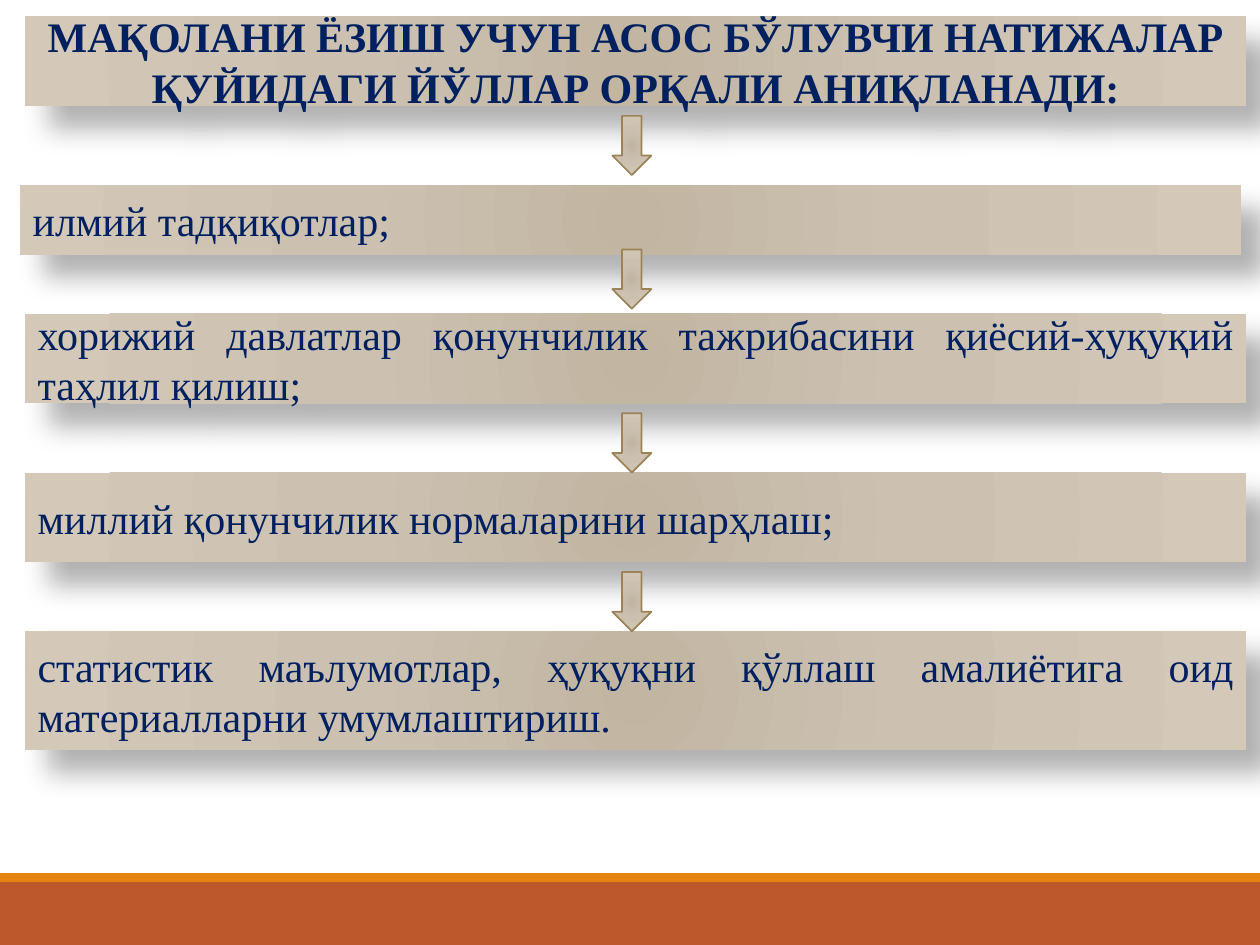
from lxml.etree import SubElement
from pptx import Presentation
from pptx.dml.color import RGBColor
from pptx.enum.shapes import MSO_SHAPE
from pptx.enum.text import MSO_ANCHOR, PP_ALIGN
from pptx.oxml import parse_xml
from pptx.oxml.ns import nsdecls, qn
from pptx.util import Inches, Pt

COLORS = {"text": "002060", "edge": "9B8357", "footer": "BD582C", "stripe": "E48312",
          "core": "C2B5A2", "middle": "CCC1B1", "rim": "D4C8B8", "shadow": "000000"}

deck = Presentation()
deck.slide_width, deck.slide_height = Inches(10), Inches(7.5)
slide = deck.slides.add_slide(deck.slide_layouts[6])
COL, ROW = deck.slide_width // 1000, deck.slide_height // 750


def add_block(kind, left, top, width, height):
    block = slide.shapes.add_shape(kind, left * COL, top * ROW, width * COL, height * ROW)
    block.shadow.inherit = False
    block.line.fill.background()
    return block


def fill_radial(block):
    block.fill.gradient()
    plain = block.element.spPr.find(qn("a:gradFill"))
    stops = "".join(f'<a:gs pos="{share * 1000}"><a:srgbClr val="{COLORS[name]}"/></a:gs>'
                    for share, name in ((0, "core"), (45, "middle"), (100, "rim")))
    block.element.spPr.replace(plain, parse_xml(
        f'<a:gradFill {nsdecls("a")} rotWithShape="1"><a:gsLst>{stops}</a:gsLst>'
        '<a:path path="circle"><a:fillToRect l="100000" t="100000" r="100000" b="100000"/>'
        '</a:path></a:gradFill>'))


for name, top, height in (("footer", 700, 50), ("stripe", 693, 7)):
    band = add_block(MSO_SHAPE.RECTANGLE, 0, top, 1000, height)
    band.fill.solid()
    band.fill.fore_color.rgb = RGBColor.from_string(COLORS[name])

steps = [
    (20, 13, 71, "МАҚОЛАНИ ЁЗИШ УЧУН АСОС БЎЛУВЧИ НАТИЖАЛАР ҚУЙИДАГИ ЙЎЛЛАР ОРҚАЛИ АНИҚЛАНАДИ:"),
    (16, 147, 55, "илмий тадқиқотлар;"),
    (20, 249, 71, "хорижий давлатлар қонунчилик тажрибасини қиёсий-ҳуқуқий таҳлил қилиш;"),
    (20, 375, 71, "миллий қонунчилик нормаларини шарҳлаш;"),
    (20, 501, 94, "статистик маълумотлар, ҳуқуқни қўллаш амалиётига оид материалларни умумлаштириш."),
]
for number, (left, top, height, wording) in enumerate(steps):
    step = add_block(MSO_SHAPE.ROUNDED_RECTANGLE, left, top, 969, height)
    step.adjustments[0] = 0
    fill_radial(step)
    shadow = SubElement(step.element.spPr.find(qn("a:effectLst")), qn("a:outerShdw"),
                        blurRad=str(Pt(15)), dist=str(Pt(18)), dir=str(45 * 60000),
                        algn="tl", rotWithShape="0")
    tint = SubElement(shadow, qn("a:srgbClr"), val=COLORS["shadow"])
    SubElement(tint, qn("a:alpha"), val="30000")

    step.text_frame.word_wrap = True
    step.text_frame.vertical_anchor = MSO_ANCHOR.MIDDLE
    line = step.text_frame.paragraphs[0]
    line.text = wording
    line.alignment = PP_ALIGN.JUSTIFY if number else PP_ALIGN.CENTER
    line.font.name, line.font.size = "Times New Roman", Pt(24)
    line.font.bold = number == 0
    line.font.color.rgb = RGBColor.from_string(COLORS["text"])

for top in (92, 198, 328, 454):
    arrow = add_block(MSO_SHAPE.DOWN_ARROW, 486, top, 31, 47)
    fill_radial(arrow)
    arrow.line.color.rgb = RGBColor.from_string(COLORS["edge"])
    arrow.line.width = Pt(1)

deck.save("out.pptx")
